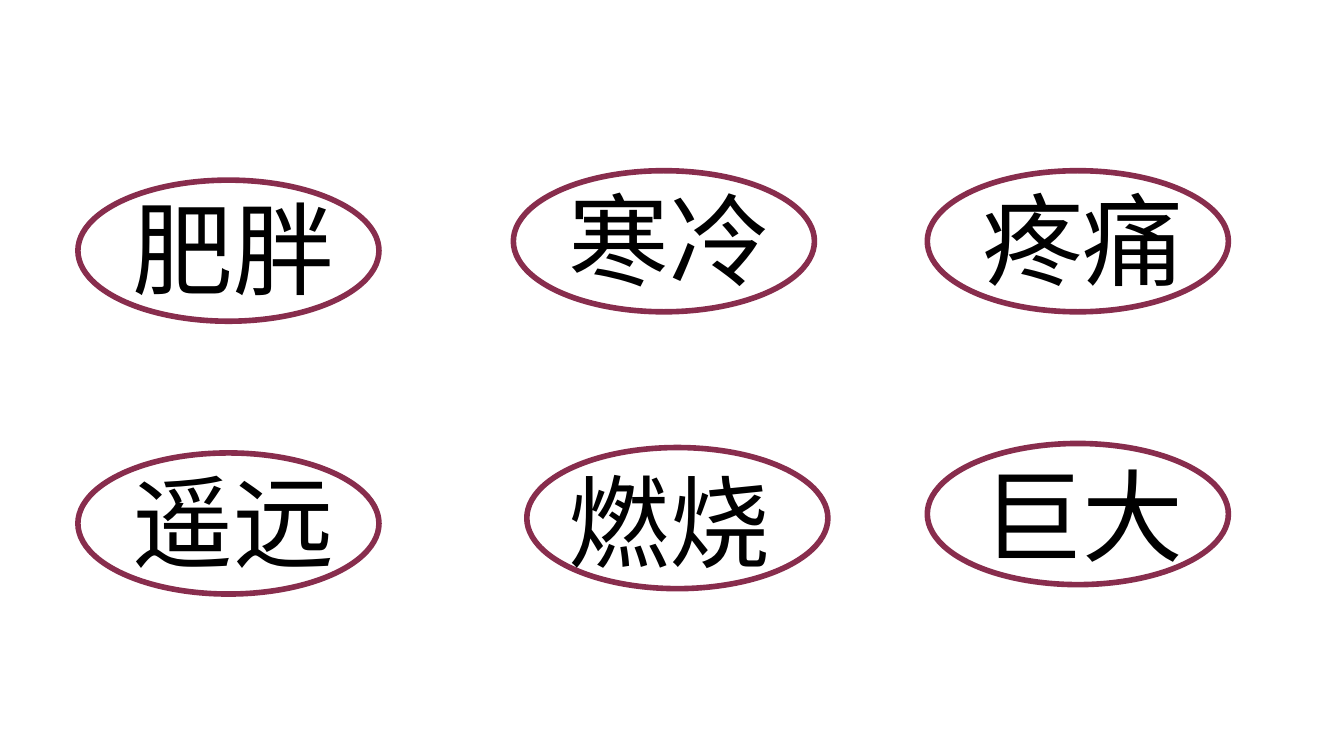
"""Build a slide of six two-character words, each circled by an ellipse."""
from dataclasses import dataclass

import pptx
import pptx.dml.color
import pptx.enum.shapes
import pptx.enum.text
import pptx.oxml.ns
import pptx.slide
import pptx.util
from lxml import etree
from pptx.util import Inches

PLUM = pptx.dml.color.RGBColor(0x88, 0x2D, 0x4D)
BLACK = pptx.dml.color.RGBColor(0, 0, 0)
FONT = "Noto Sans CJK SC"
OVAL_W, OVAL_H = 2.24, 1.05
TEXT_W, TEXT_H = 2.14, 1.01


@dataclass
class Word:
    text: str
    oval_left: float
    oval_top: float
    text_left: float
    text_top: float


WORDS = [
    Word("肥胖", 0.58, 1.34, 0.89, 1.34),
    Word("遥远", 0.58, 3.37, 0.89, 3.37),
    Word("寒冷", 3.82, 1.27, 4.13, 1.27),
    Word("巨大", 6.9, 3.3, 7.21, 3.33),
    Word("燃烧", 3.92, 3.33, 4.13, 3.37),
    Word("疼痛", 6.9, 1.27, 7.21, 1.27),
]


def add_oval(s: pptx.slide.Slide, word: Word) -> None:
    sp = s.shapes.add_shape(
        pptx.enum.shapes.MSO_SHAPE.OVAL,
        Inches(word.oval_left), Inches(word.oval_top), Inches(OVAL_W), Inches(OVAL_H),
    )
    sp.shadow.inherit = False
    sp.fill.background()
    sp.line.color.rgb = PLUM
    sp.line.width = pptx.util.Pt(3)


def add_text(s: pptx.slide.Slide, word: Word) -> None:
    sp = s.shapes.add_textbox(
        Inches(word.text_left), Inches(word.text_top), Inches(TEXT_W), Inches(TEXT_H)
    )
    tf = sp.text_frame
    tf.word_wrap = True
    tf.auto_size = pptx.enum.text.MSO_AUTO_SIZE.SHAPE_TO_FIT_TEXT
    p = tf.paragraphs[0]
    p.text = word.text
    p.font.size = pptx.util.Pt(54)
    p.font.color.rgb = BLACK
    p.font.name = FONT
    props = p._p.get_or_add_pPr().find(pptx.oxml.ns.qn("a:defRPr"))
    etree.SubElement(props, pptx.oxml.ns.qn("a:ea"), typeface=FONT)


def main() -> None:
    prs = pptx.Presentation()
    prs.slide_width = Inches(10)
    prs.slide_height = prs.slide_width * 9 // 16
    s = prs.slides.add_slide(prs.slide_layouts[6])
    for word in WORDS:
        add_oval(s, word)
        add_text(s, word)
    prs.save("out.pptx")


if __name__ == "__main__":
    main()
